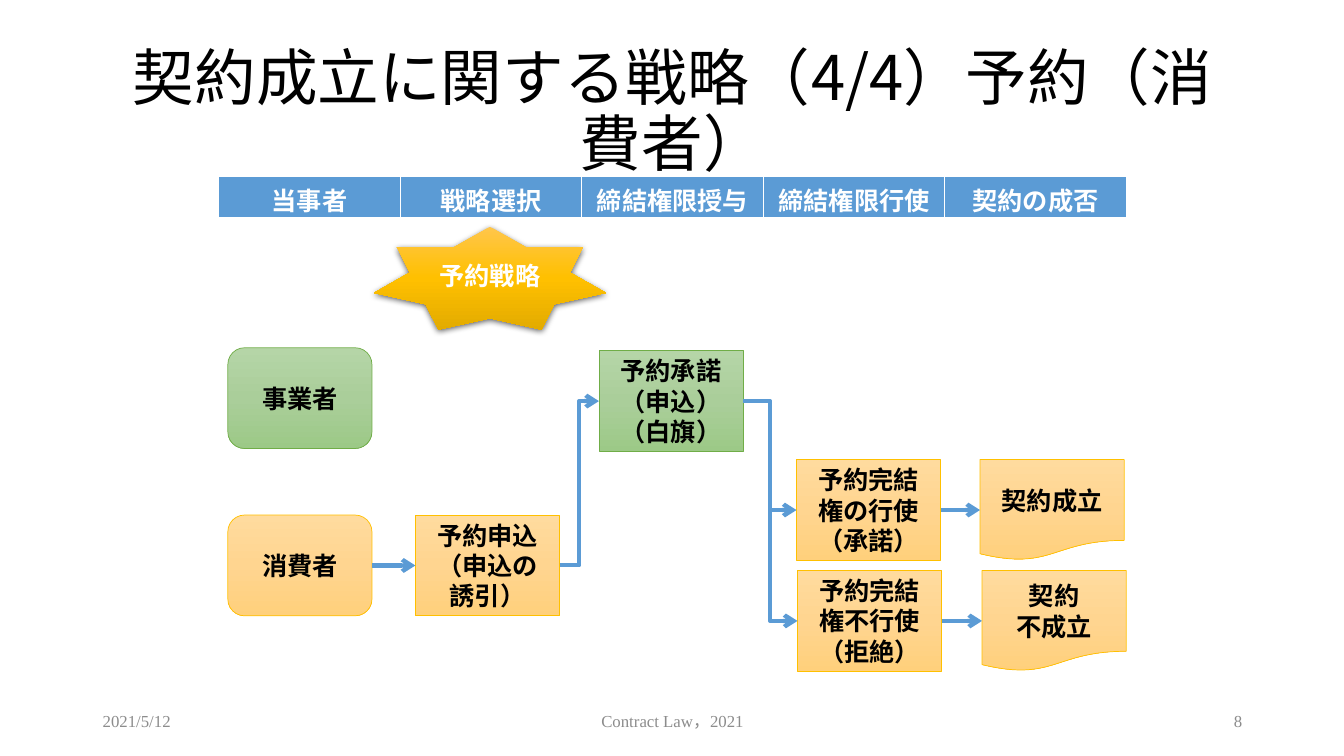
"""Build the slide on reservation strategy in contract formation."""
from copy import deepcopy
from dataclasses import dataclass
from typing import Any, Optional

from lxml.etree import SubElement
from pptx import Presentation
from pptx.dml.color import RGBColor
from pptx.enum.shapes import MSO_CONNECTOR as Link, MSO_SHAPE as Kind
from pptx.enum.text import MSO_ANCHOR as Anchor, MSO_AUTO_SIZE as Fit, PP_ALIGN as Align
from pptx.oxml.ns import qn
from pptx.util import Inches, Pt

BLACK = RGBColor(0x00, 0x00, 0x00)
WHITE = RGBColor(0xFF, 0xFF, 0xFF)
GRAY = RGBColor(0x8C, 0x8C, 0x8C)
BLUE = RGBColor(0x5B, 0x9B, 0xD5)
GREEN = RGBColor(0x70, 0xAD, 0x47)
GOLD = RGBColor(0xFF, 0xC0, 0x00)
SANS = "Noto Sans CJK JP"
SERIF = "Times New Roman"

HEAD = {"size": Pt(44), "name": SANS, "bold": False}
BODY = {"size": Pt(18), "name": SERIF, "bold": True}
FOOT = {"size": Pt(12), "name": SERIF, "bold": False}


@dataclass(frozen=True)
class Tone:
    stops: tuple[RGBColor, RGBColor, RGBColor]
    edge: Optional[RGBColor]
    ink: RGBColor = BLACK


@dataclass(frozen=True)
class Node:
    key: str
    text: str
    left: float
    top: float
    kind: Kind
    tone: Tone
    width: float = 1.43
    height: float = 1.0


@dataclass(frozen=True)
class Arrow:
    start: str
    end: str
    link: Link = Link.STRAIGHT


@dataclass(frozen=True)
class Note:
    text: str
    left: float
    width: float
    align: Align


LEAF = Tone((RGBColor(0xB5, 0xD5, 0xA7), RGBColor(0xAA, 0xCE, 0x9A),
             RGBColor(0x9C, 0xC9, 0x87)), GREEN)
PEACH = Tone((RGBColor(0xFF, 0xDB, 0x9E), RGBColor(0xFF, 0xD5, 0x90),
              RGBColor(0xFF, 0xD0, 0x7C)), GOLD)
SUN = Tone((RGBColor(0xFF, 0xC6, 0x4B), GOLD, RGBColor(0xE3, 0xAB, 0x00)), None, WHITE)

TITLE = "契約成立に関する戦略（4/4）予約（消費者）"
HEADS = ("当事者", "戦略選択", "締結権限授与", "締結権限行使", "契約の成否")
NODES = (
    Node("trader", "事業者", 2.26, 3.45, Kind.ROUNDED_RECTANGLE, LEAF),
    Node("buyer", "消費者", 2.26, 5.11, Kind.ROUNDED_RECTANGLE, PEACH),
    Node("accept", "予約承諾\n（申込）\n（白旗）", 5.94, 3.48, Kind.RECTANGLE, LEAF),
    Node("use", "予約完結権の行使\n（承諾）", 7.9, 4.56, Kind.RECTANGLE, PEACH),
    Node("deal", "契約成立", 9.72, 4.56, Kind.FLOWCHART_DOCUMENT, PEACH),
    Node("offer", "予約申込\n（申込の\n誘引）", 4.12, 5.11, Kind.RECTANGLE, PEACH),
    Node("star", "予約戦略", 3.71, 2.25, Kind.STAR_7_POINT, SUN, 2.3, 1.02),
    Node("refuse", "予約完結権不行使\n（拒絶）", 7.91, 5.66, Kind.RECTANGLE, PEACH),
    Node("fail", "契約\n不成立", 9.74, 5.66, Kind.FLOWCHART_DOCUMENT, PEACH),
)
ARROWS = (
    Arrow("buyer", "offer"),
    Arrow("offer", "accept", Link.ELBOW),
    Arrow("accept", "use", Link.ELBOW),
    Arrow("accept", "refuse", Link.ELBOW),
    Arrow("use", "deal"),
    Arrow("refuse", "fail"),
)
NOTES = (
    Note("2021/5/12", 0.92, 3, Align.LEFT),
    Note("Contract Law，2021", 4.42, 4.5, Align.CENTER),
    Note("8", 9.42, 3, Align.RIGHT),
)


def write(frame: Any, text: str, style: dict[str, Any], ink: RGBColor,
          align: Align = Align.CENTER) -> None:
    para = frame.paragraphs[0]
    para.text = text
    para.alignment = align
    for run in para.runs:
        for key, value in style.items():
            setattr(run.font, key, value)
        run.font.color.rgb = ink
        SubElement(run.font._element, qn("a:ea"), typeface=SANS)


def shade(shape: Any, tone: Tone) -> None:
    shape.fill.gradient()
    shape.fill.gradient_angle = 270
    stops = shape._element.spPr.find(".//" + qn("a:gsLst"))
    stops.append(deepcopy(stops[0]))
    for place, (stop, color) in enumerate(zip(shape.fill.gradient_stops, tone.stops)):
        stop.position = place / 2
        stop.color.rgb = color


def add_node(slide: Any, node: Node) -> Any:
    shape = slide.shapes.add_shape(
        node.kind, *map(Inches, (node.left, node.top, node.width, node.height)))
    shape.shadow.inherit = False
    shade(shape, node.tone)
    if node.tone.edge is None:
        shape.line.fill.background()
        add_glow(shape)
    else:
        shape.line.color.rgb = node.tone.edge
        shape.line.width = Pt(0.5)
    shape.text_frame.vertical_anchor = Anchor.MIDDLE
    write(shape.text_frame, node.text, BODY, node.tone.ink)
    return shape


def add_glow(shape: Any) -> None:
    effects = shape._element.spPr.find(qn("a:effectLst"))
    glow = SubElement(effects, qn("a:outerShdw"), blurRad=str(Pt(4.5)),
                      dist=str(Pt(1.5)), dir="5400000", algn="ctr", rotWithShape="0")
    color = SubElement(glow, qn("a:srgbClr"), val=str(BLACK))
    SubElement(color, qn("a:alpha"), val="63000")


def add_arrow(slide: Any, arrow: Arrow, shapes: dict[str, Any]) -> None:
    line = slide.shapes.add_connector(arrow.link, 0, 0, 0, 0)
    line.begin_connect(shapes[arrow.start], 3)
    line.end_connect(shapes[arrow.end], 1)
    line.line.color.rgb = BLUE
    line.line.width = Pt(3)
    SubElement(line.line._get_or_add_ln(), qn("a:tailEnd"), type="arrow")
    SubElement(line._element.spPr, qn("a:effectLst"))


def add_heads(slide: Any) -> None:
    table = slide.shapes.add_table(
        1, len(HEADS), *map(Inches, (2.17, 1.75, 9, 0.41))).table
    for cell, text in zip(table.iter_cells(), HEADS):
        cell.fill.solid()
        cell.fill.fore_color.rgb = BLUE
        write(cell.text_frame, text, BODY, WHITE)


def add_title(slide: Any) -> None:
    title = slide.shapes.title
    place = {"left": 0.92, "top": 0.4, "width": 11.5, "height": 1.45}
    for key, value in place.items():
        setattr(title, key, Inches(value))
    frame = title.text_frame
    frame.auto_size = Fit.NONE
    frame.vertical_anchor = Anchor.MIDDLE
    write(frame, TITLE, HEAD, BLACK)
    frame.paragraphs[0].line_spacing = 0.9


def add_note(slide: Any, note: Note) -> None:
    box = slide.shapes.add_textbox(*map(Inches, (note.left, 6.95, note.width, 0.4)))
    box.text_frame.word_wrap = True
    box.text_frame.vertical_anchor = Anchor.MIDDLE
    write(box.text_frame, note.text, FOOT, GRAY, note.align)


def main() -> None:
    deck = Presentation()
    deck.slide_width, deck.slide_height = Inches(13.33), Inches(7.5)
    slide = deck.slides.add_slide(deck.slide_layouts[5])
    add_title(slide)
    for note in NOTES:
        add_note(slide, note)
    add_heads(slide)
    shapes = {node.key: add_node(slide, node) for node in NODES}
    for arrow in ARROWS:
        add_arrow(slide, arrow, shapes)
    deck.save("out.pptx")


if __name__ == "__main__":
    main()
